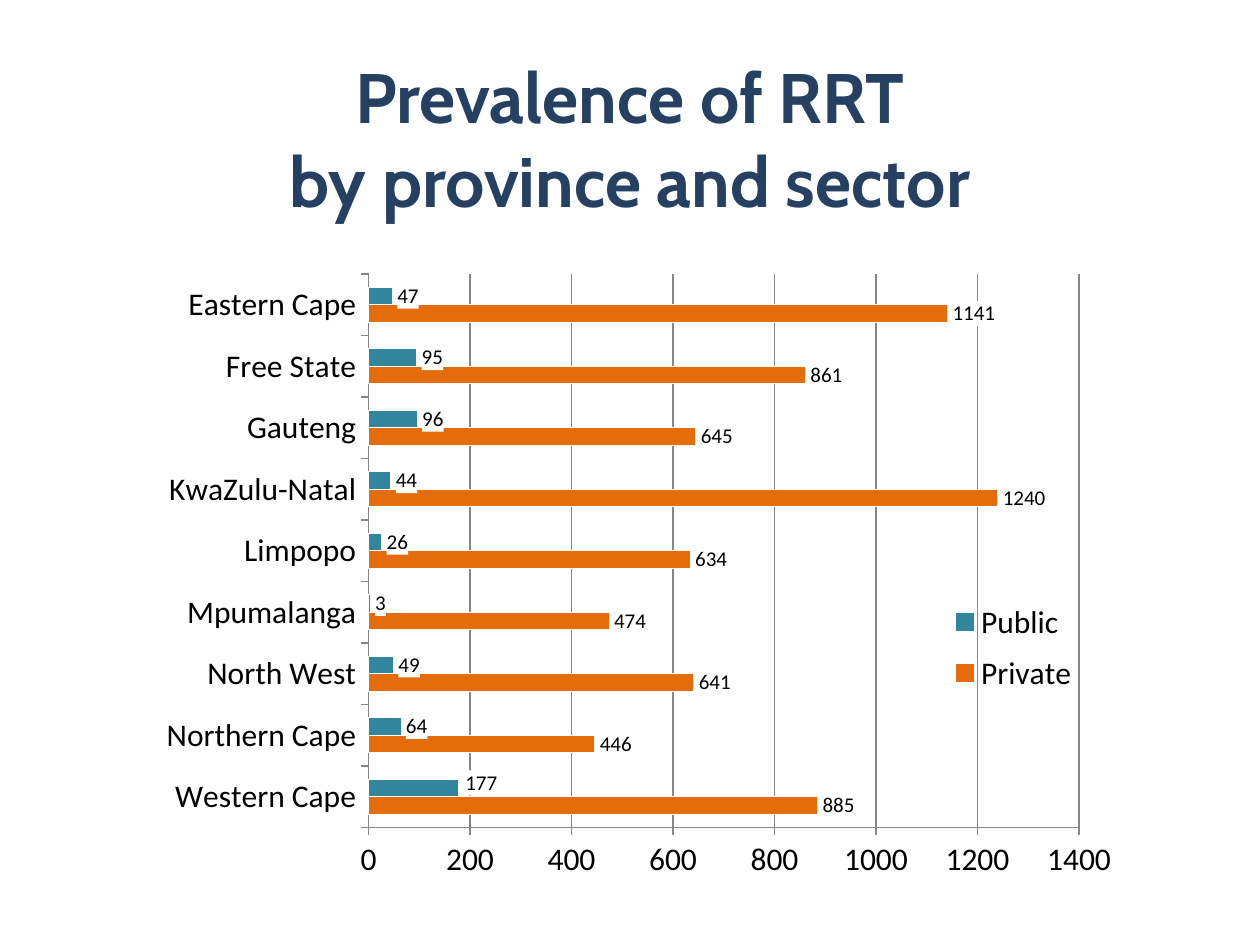
from dataclasses import dataclass

from lxml import etree
from pptx import Presentation
from pptx import util as u
from pptx.chart import data as chart_data
from pptx.dml.color import RGBColor
from pptx.enum import chart as ch
from pptx.enum import text
from pptx.oxml import parse_xml
from pptx.oxml.ns import nsdecls, qn


@dataclass(frozen=True)
class Theme:
    title_font: str = "Cabin"
    body_font: str = "Calibri"
    title_size: int = 40
    body_size: int = 18
    label_size: int = 12
    title: str = "254061"
    ink: str = "000000"
    grid: str = "868686"
    paper: str = "FFFFFF"


@dataclass(frozen=True)
class Sector:
    name: str
    color: str
    values: tuple[int, ...]


@dataclass(frozen=True)
class Area:
    """A rectangle in shares of whatever contains it."""
    left: float
    top: float
    width: float
    height: float


THEME = Theme()
TITLE_AREA = Area(0, 0.06, 1, 0.17)
CHART_AREA = Area(0.11, 0.27, 0.78, 0.67)
PLOT_AREA = Area(0.234, 0.03, 0.723, 0.874)
LEGEND_AREA = Area(0.8, 0.53, 0.18, 0.18)
PROVINCES = ("Western Cape", "Northern Cape", "North West", "Mpumalanga", "Limpopo",
             "KwaZulu-Natal", "Gauteng", "Free State", "Eastern Cape")
SECTORS = (
    Sector("Private", "E46C0A", (885, 446, 641, 474, 634, 1240, 645, 861, 1141)),
    Sector("Public", "31859C", (177, 64, 49, 3, 26, 44, 96, 95, 47)),
)


def rgb(color: str) -> RGBColor:
    return RGBColor.from_string(color)


def style_font(font, size: int, color: str, name: str = THEME.body_font) -> None:
    font.size, font.name = u.Pt(size), name
    font.color.rgb = rgb(color)


def scaled(area: Area, deck) -> tuple[int, int, int, int]:
    """Turn shares of the slide into left, top, width and height."""
    return (int(area.left * deck.slide_width), int(area.top * deck.slide_height),
            int(area.width * deck.slide_width), int(area.height * deck.slide_height))


def set_layout(parent, index: int, **settings) -> None:
    """Give a chart part a manual layout, as the child at the given index."""
    for old in parent.findall(qn("c:layout")):
        parent.remove(old)
    layout = etree.Element(qn("c:layout"))
    manual = etree.SubElement(layout, qn("c:manualLayout"))
    for tag, value in settings.items():
        etree.SubElement(manual, qn(f"c:{tag}")).set("val", str(value))
    parent.insert(index, layout)


def area_settings(area: Area) -> dict:
    return dict(xMode="edge", yMode="edge", x=area.left, y=area.top,
                w=area.width, h=area.height)


def add_title(slide, deck) -> None:
    title = slide.shapes.title
    title.left, title.top, title.width, title.height = scaled(TITLE_AREA, deck)
    frame = title.text_frame
    frame.text = "Prevalence of RRT\vby province and sector"
    frame.vertical_anchor = text.MSO_ANCHOR.MIDDLE
    para = frame.paragraphs[0]
    para.alignment = text.PP_ALIGN.CENTER
    para.font.bold = True
    style_font(para.font, THEME.title_size, THEME.title, THEME.title_font)


def style_series(series, sector: Sector) -> None:
    series.format.fill.solid()
    series.format.fill.fore_color.rgb = rgb(sector.color)
    series.format.line.color.rgb = rgb(THEME.paper)
    series.invert_if_negative = False
    labels = series.data_labels
    labels.show_value = True
    labels.number_format, labels.number_format_is_linked = "0", False
    labels.position = ch.XL_LABEL_POSITION.OUTSIDE_END
    style_font(labels.font, THEME.label_size, THEME.ink)
    labels.font._element.getparent().getparent().getparent().addprevious(parse_xml(
        f'<c:spPr {nsdecls("c", "a")}><a:solidFill>'
        f'<a:srgbClr val="{THEME.paper}"/></a:solidFill></c:spPr>'))


def nudge_label(series, point: int, x: float, y: float) -> None:
    label = series.points[point].data_label
    style_font(label.font, THEME.label_size, THEME.ink)
    label.position = ch.XL_LABEL_POSITION.OUTSIDE_END
    entry = label.font._element.getparent().getparent().getparent().getparent()
    set_layout(entry, 1, x=x, y=y)


def style_axis(axis) -> None:
    axis.major_tick_mark = ch.XL_TICK_MARK.OUTSIDE
    axis.minor_tick_mark = ch.XL_TICK_MARK.NONE
    axis.format.line.color.rgb = rgb(THEME.grid)
    axis.format.line.width = u.Pt(0.75)
    style_font(axis.tick_labels.font, THEME.body_size, THEME.ink)


def add_prevalence_chart(slide, deck) -> None:
    table = chart_data.CategoryChartData(number_format="0")
    table.categories = PROVINCES
    for sector in SECTORS:
        table.add_series(sector.name, sector.values)
    chart = slide.shapes.add_chart(
        ch.XL_CHART_TYPE.BAR_CLUSTERED, *scaled(CHART_AREA, deck), table).chart
    chart.has_title = False
    style_font(chart.font, THEME.body_size, THEME.ink)

    plot = chart.plots[0]
    plot.gap_width, plot.overlap, plot.vary_by_categories = 150, 0, False
    for series, sector in zip(plot.series, SECTORS):
        style_series(series, sector)
    nudge_label(plot.series[1], 0, x=0.002, y=-0.008)

    values = chart.value_axis
    style_axis(chart.category_axis)
    style_axis(values)
    values.minimum_scale, values.maximum_scale, values.major_unit = 0, 1400, 200
    values.tick_labels.number_format = "0"
    values.tick_labels.number_format_is_linked = False
    values.has_major_gridlines = True
    values.major_gridlines.format.line.color.rgb = rgb(THEME.grid)
    values.major_gridlines.format.line.width = u.Pt(0.75)

    chart.has_legend = True
    legend = chart.legend
    legend.position = ch.XL_LEGEND_POSITION.RIGHT
    legend.include_in_layout = False
    style_font(legend.font, THEME.body_size, THEME.ink)
    plot_area = chart._chartSpace.find(f".//{qn('c:plotArea')}")
    set_layout(plot_area, 0, layoutTarget="inner", **area_settings(PLOT_AREA))
    set_layout(legend._element, 1, **area_settings(LEGEND_AREA))


def main() -> None:
    deck = Presentation()
    deck.slide_width, deck.slide_height = u.Inches(10), u.Inches(7.5)
    slide = deck.slides.add_slide(deck.slide_layouts[5])
    add_prevalence_chart(slide, deck)
    add_title(slide, deck)
    deck.save("out.pptx")


if __name__ == "__main__":
    main()
